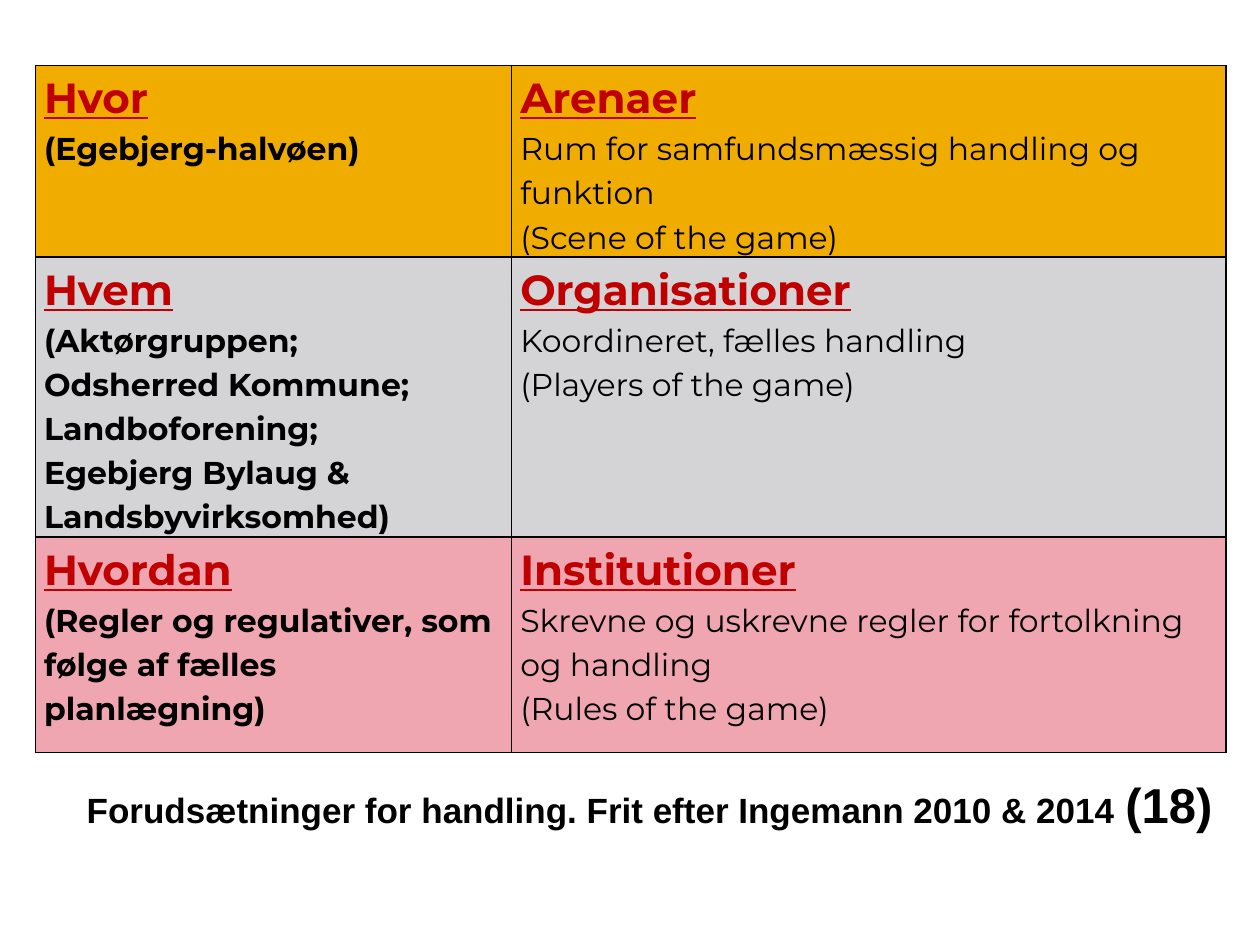
from lxml.etree import SubElement
from pptx import Presentation
from pptx.dml.color import RGBColor
from pptx.enum.text import MSO_ANCHOR as Anchor, PP_ALIGN as Align
from pptx.oxml.ns import qn
from pptx.util import Inches, Pt

BLACK, RED = "000000", "C00000"
COLUMN_WIDTHS = (3.78, 5.67)
# Height, fill, then heading and lines for each of the two cells
ROWS = [
    (1.52, "F0AD00",
     ("Hvor", "(Egebjerg-halvøen)"),
     ("Arenaer", "Rum for samfundsmæssig handling og funktion",
      "(Scene of the game)")),
    (2.22, "D4D4D6",
     ("Hvem", "(Aktørgruppen;", "Odsherred Kommune;", "Landboforening;",
      "Egebjerg Bylaug & Landsbyvirksomhed)"),
     ("Organisationer", "Koordineret, fælles handling",
      "(Players of the game)")),
    (1.71, "F0A6B0",
     ("Hvordan", "(Regler og regulativer, som følge af fælles planlægning)"),
     ("Institutioner", "Skrevne og uskrevne regler for fortolkning og handling",
      "(Rules of the game)")),
]


def rgb(value):
    return RGBColor.from_string(value)


def set_values(target, values):
    for name, value in values.items():
        setattr(target, name, value)


def add_span(para, text, size, color=BLACK, **font_values):
    span = para.add_run()
    span.text = text
    set_values(span.font, {"size": Pt(size), **font_values})
    span.font.color.rgb = rgb(color)


def add_borders(cell):
    properties = cell._tc.get_or_add_tcPr()
    for position, side in enumerate(("lnL", "lnR", "lnT", "lnB")):
        line = SubElement(properties, qn(f"a:{side}"), w=str(Pt(1)))
        fill = SubElement(line, qn("a:solidFill"))
        SubElement(fill, qn("a:srgbClr"), val=BLACK)
        # Borders come before the cell fill in the schema
        properties.insert(position, line)


def fill_cell(cell, lines, color, bold):
    set_values(cell, {"margin_left": Inches(0.07), "margin_right": Inches(0.07),
                      "margin_top": 0, "margin_bottom": 0})
    cell.fill.solid()
    cell.fill.fore_color.rgb = rgb(color)
    add_borders(cell)
    frame = cell.text_frame
    for index, text in enumerate(lines):
        para = frame.add_paragraph() if index else frame.paragraphs[0]
        para.line_spacing = 1.15
        if index:
            add_span(para, text, 18, name="Montserrat", bold=bold)
        else:
            add_span(para, text, 24, RED, name="Montserrat", bold=True,
                     underline=True)


def add_concept_table(page):
    table = page.shapes.add_table(
        len(ROWS), len(COLUMN_WIDTHS), Inches(0.28), Inches(0.52),
        Inches(sum(COLUMN_WIDTHS)), Inches(sum(row[0] for row in ROWS))).table
    set_values(table, {"first_row": False, "horz_banding": False})
    for column, width in zip(table.columns, COLUMN_WIDTHS):
        column.width = Inches(width)
    for row, (height, color, question, concept) in zip(table.rows, ROWS):
        row.height = Inches(height)
        fill_cell(row.cells[0], question, color, bold=True)
        fill_cell(row.cells[1], concept, color, bold=False)


def add_caption(page):
    box = page.shapes.add_textbox(Inches(0.59), Inches(5.95),
                                  Inches(9.2), Inches(0.71))
    frame = box.text_frame
    set_values(frame, {"word_wrap": True, "vertical_anchor": Anchor.BOTTOM})
    para = frame.paragraphs[0]
    para.alignment = Align.JUSTIFY
    add_span(para, "Forudsætninger for handling. Frit efter Ingemann 2010 & 2014 ",
             20, name="Arial", bold=True)
    add_span(para, "(18)", 28, name="Arial", bold=True)


def main():
    deck = Presentation()
    set_values(deck, {"slide_width": Inches(10), "slide_height": Inches(7.5)})
    page = deck.slides.add_slide(deck.slide_layouts[6])
    add_concept_table(page)
    add_caption(page)
    deck.save("out.pptx")


if __name__ == "__main__":
    main()
